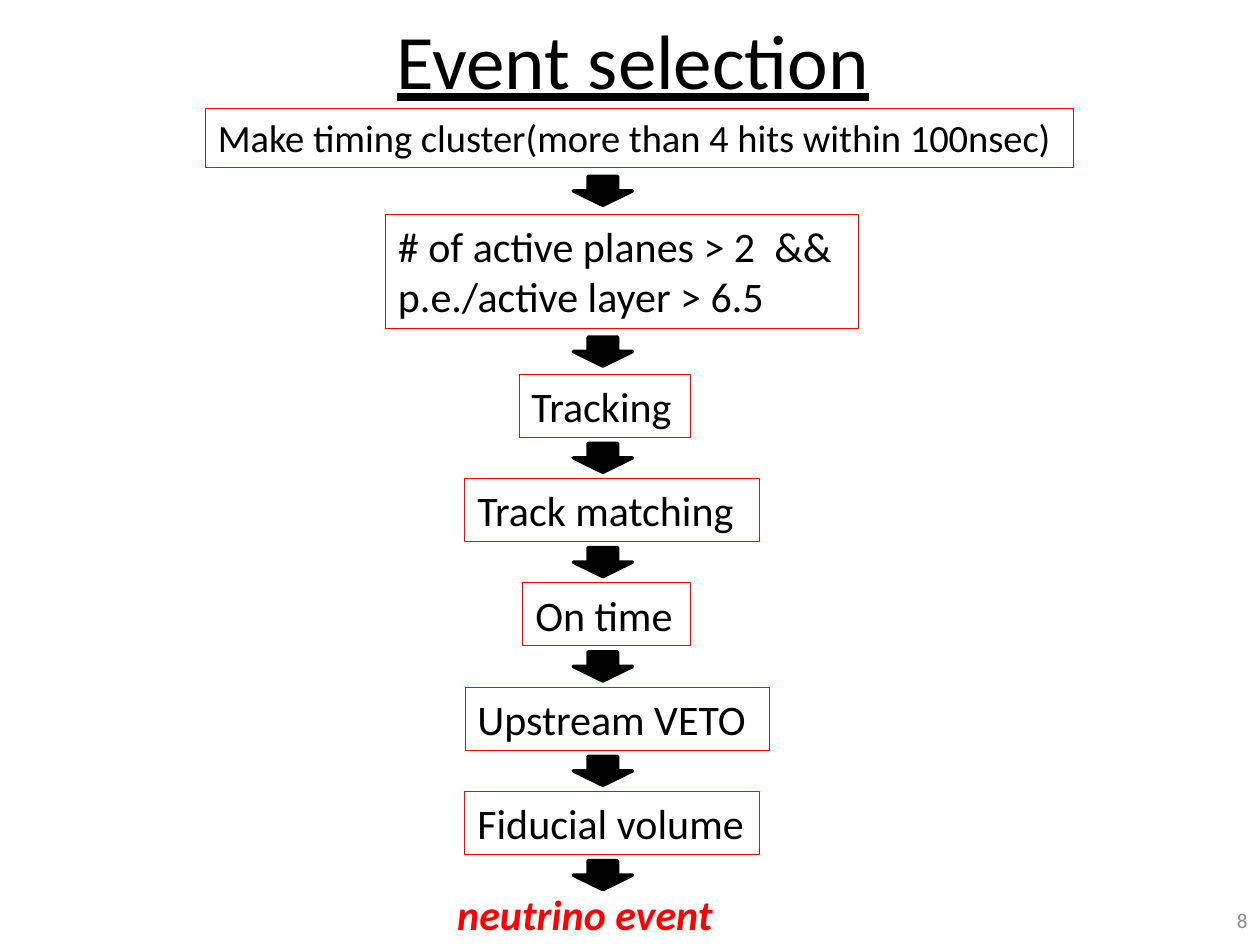
"""Build the event selection flow chart slide."""
import pptx
import pptx.util
import pptx.dml.color
import pptx.enum.shapes
import pptx.enum.text

SHAPES = pptx.enum.shapes.MSO_SHAPE
ALIGN = pptx.enum.text.PP_ALIGN
ANCHOR = pptx.enum.text.MSO_ANCHOR


def color(hex_string):
    return pptx.dml.color.RGBColor.from_string(hex_string)


def write(shape, text, size, ink="000000", align=ALIGN.LEFT, anchor=ANCHOR.TOP):
    frame = shape.text_frame
    frame.text = text
    frame.word_wrap = True
    frame.vertical_anchor = anchor
    paragraph = frame.paragraphs[0]
    paragraph.alignment = align
    font = paragraph.runs[0].font
    font.name = "Calibri"
    font.size = pptx.util.Pt(size)
    font.color.rgb = color(ink)
    return font


presentation = pptx.Presentation()
presentation.slide_width = pptx.util.Inches(10)
presentation.slide_height = pptx.util.Inches(7.5)
column = presentation.slide_width // 100
row = presentation.slide_height // 75
slide = presentation.slides.add_slide(presentation.slide_layouts[5])

title = slide.shapes.title
title.left, title.top = int(-0.9 * column), 0
title.width, title.height = int(102.3 * column), int(9.3 * row)
write(title, "Event selection", 44, align=ALIGN.CENTER, anchor=ANCHOR.MIDDLE).underline = True

number = slide.shapes.add_textbox(int(91.4 * column), 71 * row, int(8.6 * column), 4 * row)
write(number, "8", 12, "8C8C8C", ALIGN.RIGHT, ANCHOR.MIDDLE)

step_pitch, step_height = 8.28, 5
first_step = 29.7
steps = [
    ("Make timing cluster(more than 4 hits within 100nsec)", 16.3, 8.6, 68.9, 4.7, 22),
    ("# of active planes > 2  && p.e./active layer > 6.5", 30.6, 17, 37.5, 9.1, 24),
]
single_steps = [
    ("Tracking", 41.2, 13.6),
    ("Track matching", 36.9, 23.4),
    ("On time", 41.5, 13.3),
    ("Upstream VETO", 36.9, 24.2),
    ("Fiducial volume", 36.9, 23.4),
]
for index, (text, left, width) in enumerate(single_steps):
    steps.append((text, left, first_step + index * step_pitch, width, step_height, 24))

next_tops = [step[2] for step in steps[1:]] + [first_step + len(single_steps) * step_pitch]
arrow_left, arrow_width, arrow_height = 45.5, 4.7, 2.3
for (text, left, top, width, height, size), next_top in zip(steps, next_tops):
    box = slide.shapes.add_shape(
        SHAPES.RECTANGLE, int(left * column), int(top * row), int(width * column), int(height * row))
    box.shadow.inherit = False
    box.fill.background()
    box.line.color.rgb = color("FF0000")
    box.line.width = pptx.util.Pt(0.5)
    write(box, text, size)

    arrow_top = (top + height + next_top - arrow_height) / 2
    arrow = slide.shapes.add_shape(
        SHAPES.DOWN_ARROW, int(arrow_left * column), int(arrow_top * row),
        int(arrow_width * column), int(arrow_height * row))
    arrow.shadow.inherit = False
    arrow.fill.solid()
    arrow.fill.fore_color.rgb = color("000000")
    arrow.line.color.rgb = color("000000")
    arrow.line.width = pptx.util.Pt(2)

result = slide.shapes.add_textbox(int(35.3 * column), 70 * row, int(25.8 * column), step_height * row)
result_font = write(result, "neutrino event", 24, "FF0000")
result_font.bold = True
result_font.italic = True

presentation.save("out.pptx")
